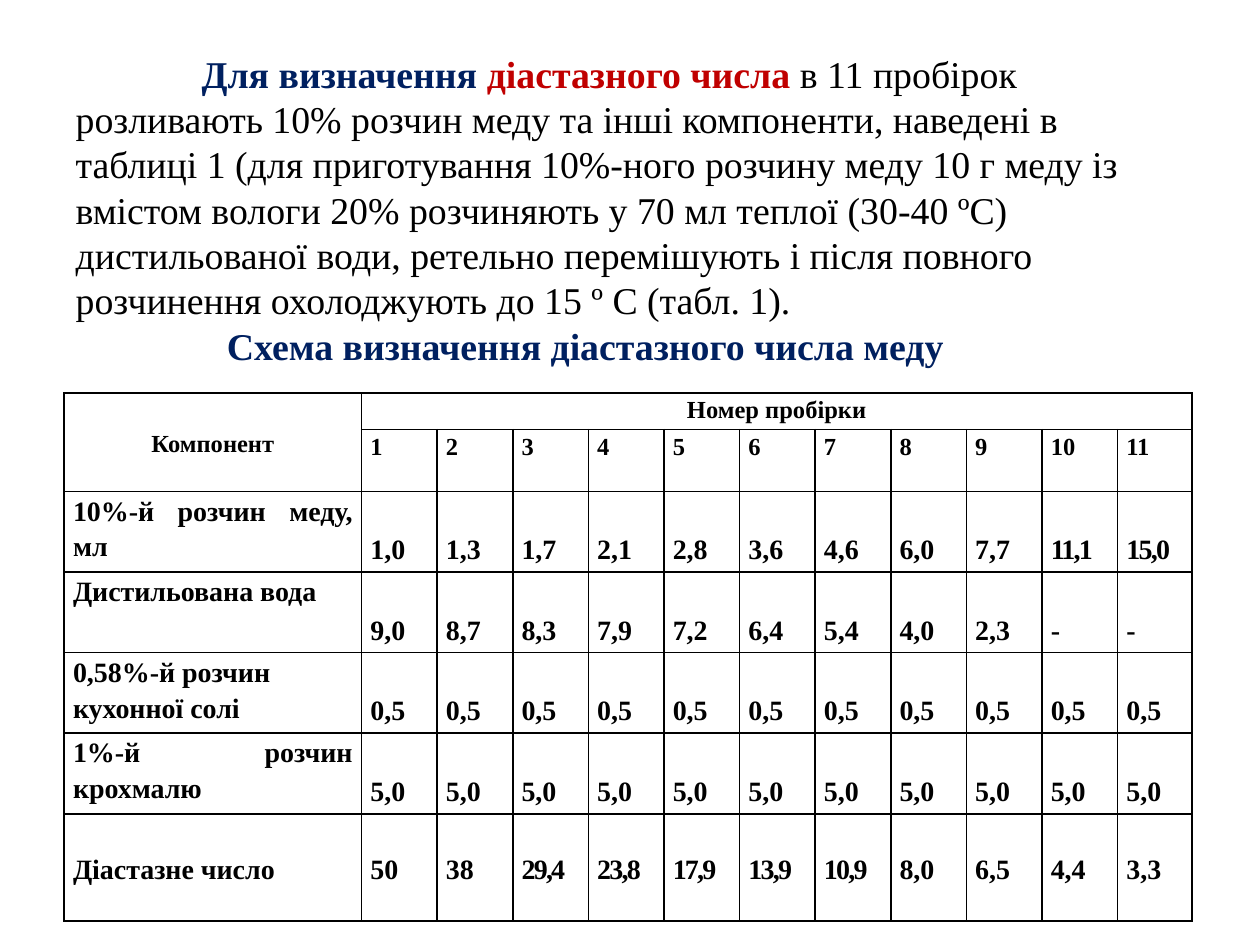
import pptx
import pptx.util
import pptx.dml.color
import pptx.enum.text
import pptx.oxml
import pptx.oxml.ns

Inches, Pt = pptx.util.Inches, pptx.util.Pt
ALIGN, ANCHOR = pptx.enum.text.PP_ALIGN, pptx.enum.text.MSO_ANCHOR
WIDTH, HEIGHT = 10, 7.5
FONT, BLACK, NAVY, RED = "Times New Roman", "000000", "002060", "C00000"

INTRO = [
    ("Для визначення ", NAVY, True),
    ("діастазного числа ", RED, True),
    ("в 11 пробірок розливають 10% розчин меду та інші компоненти, наведені в "
     "таблиці 1 (для приготування 10%-ного розчину меду 10 г меду із вмістом "
     "вологи 20% розчиняють у 70 мл теплої (30-40 ºС) дистильованої води, "
     "ретельно перемішують і після повного розчинення охолоджують до "
     "15 º С (табл. 1).", BLACK, False),
]
CAPTION = [("Схема визначення діастазного числа меду", NAVY, True)]

TUBES = [str(number) for number in range(1, 12)]
COMPONENTS = [
    ("10%-й розчин меду, мл", "1,0 1,3 1,7 2,1 2,8 3,6 4,6 6,0 7,7 11,1 15,0".split()),
    ("Дистильована вода", "9,0 8,7 8,3 7,9 7,2 6,4 5,4 4,0 2,3 - -".split()),
    ("0,58%-й розчин кухонної солі", ["0,5"] * len(TUBES)),
    ("1%-й розчин крохмалю", ["5,0"] * len(TUBES)),
    ("Діастазне число", "50 38 29,4 23,8 17,9 13,9 10,9 8,0 6,5 4,4 3,3".split()),
]
COLUMN_WIDTHS = [2.36] + [0.6] * 10 + [0.59]
ROW_HEIGHTS = [0.29, 0.49] + [0.64] * 4 + [0.85]


def color(value):
    return pptx.dml.color.RGBColor.from_string(value)


def apply(target, values):
    for name, value in values.items():
        setattr(target, name, value)


def add_run(paragraph, text, size, shade=BLACK, bold=True):
    run = paragraph.add_run()
    run.text = text
    apply(run.font, {"name": FONT, "size": Pt(size), "bold": bold})
    run.font.color.rgb = color(shade)
    return run


def add_intro(slide, box):
    """Introductory paragraph and table caption in the title placeholder."""
    title = slide.shapes.title
    apply(title, dict(zip(("left", "top", "width", "height"), map(Inches, box))))
    frame = title.text_frame
    apply(frame, {"word_wrap": True, "vertical_anchor": ANCHOR.TOP,
                  "auto_size": pptx.enum.text.MSO_AUTO_SIZE.NONE,
                  "margin_left": Inches(0.1), "margin_right": Inches(0.2),
                  "margin_top": Inches(0.1), "margin_bottom": 0})
    paragraphs = [frame.paragraphs[0], frame.add_paragraph()]
    for paragraph, runs, indent in zip(paragraphs, (INTRO, CAPTION), (1, 1.2)):
        apply(paragraph, {"alignment": ALIGN.LEFT, "line_spacing": Pt(25.9),
                          "space_before": Pt(0), "space_after": Pt(0)})
        properties = paragraph._p.get_or_add_pPr()
        properties.set("marL", "0")
        properties.set("indent", str(Inches(indent)))
        for text, shade, bold in runs:
            add_run(paragraph, text, 21.6, shade, bold)


def add_borders(cell):
    properties = cell._tc.get_or_add_tcPr()
    for position, side in enumerate(("lnL", "lnR", "lnT", "lnB")):
        line = pptx.oxml.parse_xml(
            f'<a:{side} {pptx.oxml.ns.nsdecls("a")} w="{Pt(1)}">'
            f'<a:solidFill><a:srgbClr val="{BLACK}"/></a:solidFill></a:{side}>')
        properties.insert(position, line)


def write_cell(cell, text, size=16, align=ALIGN.JUSTIFY, anchor=ANCHOR.TOP):
    apply(cell, {"vertical_anchor": anchor})
    paragraph = cell.text_frame.paragraphs[0]
    apply(paragraph, {"alignment": align, "line_spacing": 1.15})
    return add_run(paragraph, text, size)


def add_scheme(slide, box):
    """Table of components by test tube."""
    table = slide.shapes.add_table(len(ROW_HEIGHTS), len(COLUMN_WIDTHS),
                                   *map(Inches, box)).table
    apply(table, {"first_row": False, "horz_banding": False})
    for column, width in zip(table.columns, COLUMN_WIDTHS):
        column.width = Inches(width)
    for row, height in zip(table.rows, ROW_HEIGHTS):
        row.height = Inches(height)
    for cell in table.iter_cells():
        apply(cell, {"margin_left": Inches(0.07), "margin_right": Inches(0.07),
                     "margin_top": 0, "margin_bottom": 0})
        cell.fill.background()
        add_borders(cell)

    # Header rows
    table.cell(0, 0).merge(table.cell(1, 0))
    table.cell(0, 1).merge(table.cell(0, len(TUBES)))
    write_cell(table.cell(0, 0), "Компонент", 14, ALIGN.CENTER, ANCHOR.MIDDLE)
    write_cell(table.cell(0, 1), "Номер пробірки", 14, ALIGN.CENTER)
    for column, tube in enumerate(TUBES, 1):
        write_cell(table.cell(1, column), tube, 14)

    # Component rows: the last one is centred in height
    last = len(ROW_HEIGHTS) - 1
    for row, (component, amounts) in enumerate(COMPONENTS, 2):
        label_anchor = ANCHOR.MIDDLE if row == last else ANCHOR.TOP
        amount_anchor = ANCHOR.MIDDLE if row == last else ANCHOR.BOTTOM
        label_align = ALIGN.LEFT if component.startswith("0,58") else ALIGN.JUSTIFY
        write_cell(table.cell(row, 0), component, align=label_align, anchor=label_anchor)
        for column, amount in enumerate(amounts, 1):
            cell = table.cell(row, column)
            run = write_cell(cell, amount, anchor=amount_anchor)
            if row != last:
                cell.margin_bottom = Inches(0.05)
            if len(amount) > 3:  # tighten long values to fit the column
                run._r.get_or_add_rPr().set("spc", "-100")


def main():
    deck = pptx.Presentation()
    apply(deck, {"slide_width": Inches(WIDTH), "slide_height": Inches(HEIGHT)})
    slide = deck.slides.add_slide(deck.slide_layouts[5])
    add_intro(slide, (0.05 * WIDTH, 0.04 * HEIGHT, 0.9 * WIDTH, 0.89 * HEIGHT))
    add_scheme(slide, (0.051 * WIDTH, 0.416 * HEIGHT,
                       sum(COLUMN_WIDTHS), sum(ROW_HEIGHTS)))
    deck.save("out.pptx")


if __name__ == "__main__":
    main()
